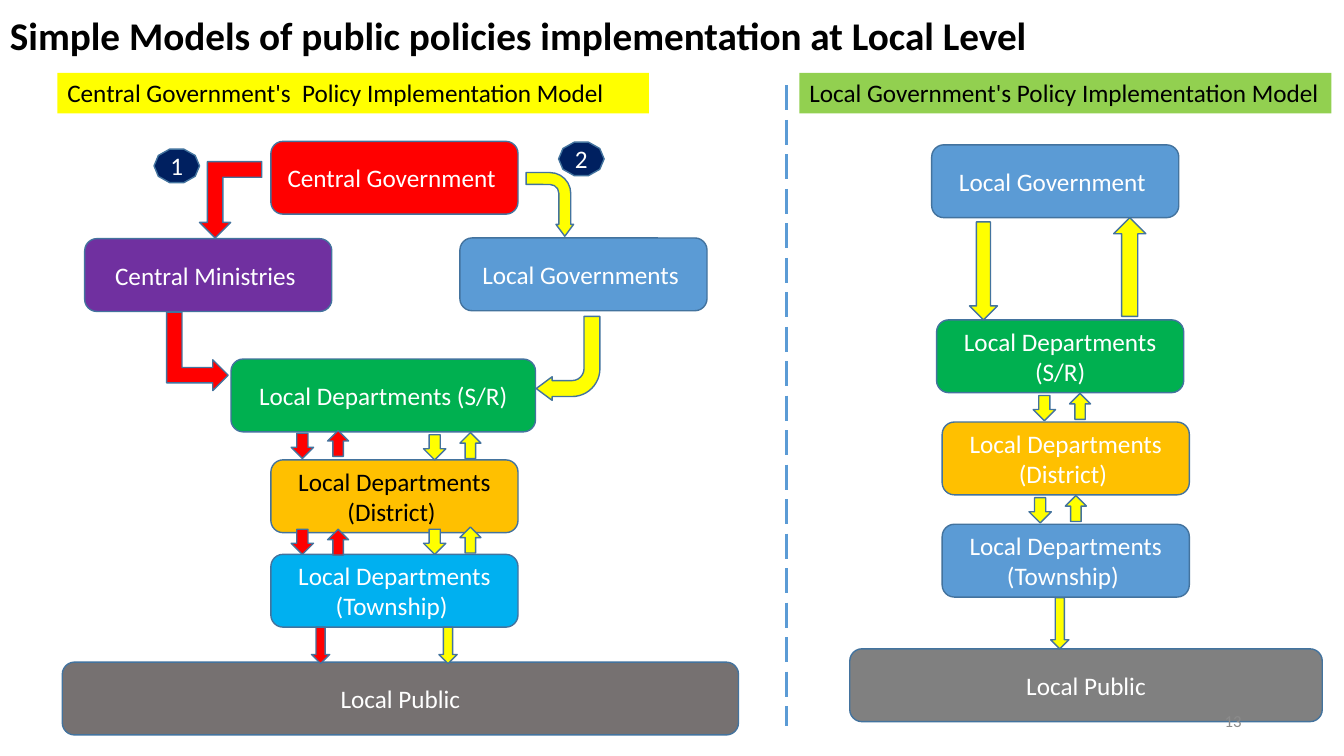
from lxml import etree
from pptx import Presentation
from pptx.dml.color import RGBColor
from pptx.enum import dml, shapes, text
from pptx.oxml import ns
from pptx.util import Pt

KIND = shapes.MSO_SHAPE
SIDE = text.PP_ALIGN
BLACK = RGBColor(0, 0, 0)
WHITE = RGBColor(255, 255, 255)
RED = RGBColor(255, 0, 0)
YELLOW = RGBColor(255, 255, 0)
BLUE = RGBColor(0x5B, 0x9B, 0xD5)
EDGE = RGBColor(0x43, 0x73, 0x9E)
PURPLE = RGBColor(0x70, 0x30, 0xA0)
GREEN = RGBColor(0, 0xB0, 0x50)
LIME = RGBColor(0x92, 0xD0, 0x50)
AMBER = RGBColor(255, 0xC0, 0)
SKY = RGBColor(0, 0xB0, 0xF0)
NAVY = RGBColor(0, 0x20, 0x60)
STONE = RGBColor(0x76, 0x71, 0x71)
GREY = RGBColor(0x80, 0x80, 0x80)
PALE = RGBColor(0x8C, 0x8C, 0x8C)


def write(shape, words, color, size=18, side=SIDE.CENTER, anchor=text.MSO_ANCHOR.MIDDLE, bold=False):
    frame = shape.text_frame
    frame.word_wrap = True
    frame.vertical_anchor = anchor
    para = frame.paragraphs[0]
    para.alignment = side
    run = para.add_run()
    run.text = words
    run.font.name = "Calibri"
    run.font.size = Pt(size)
    run.font.bold = bold
    run.font.color.rgb = color


def draw(slide, kind, x, y, w, h, fill, edge=True):
    shape = slide.shapes.add_shape(kind, Pt(x), Pt(y), Pt(w), Pt(h))
    shape.shadow.inherit = False
    shape.fill.solid()
    shape.fill.fore_color.rgb = fill
    if edge:
        shape.line.color.rgb = EDGE
        shape.line.width = Pt(1)
    else:
        shape.line.fill.background()
    return shape


def label(slide, x, y, w, h, words, color, **style):
    write(slide.shapes.add_textbox(Pt(x), Pt(y), Pt(w), Pt(h)), words, color, **style)


def box(slide, x, y, words, fill, w=176.5, color=WHITE):
    write(draw(slide, KIND.ROUNDED_RECTANGLE, x, y, w, 52, fill), words, color)


def banner(slide, x, w, words, fill):
    shape = draw(slide, KIND.RECTANGLE, x, 52, w, 29, fill, edge=False)
    write(shape, words, BLACK, side=SIDE.LEFT, anchor=text.MSO_ANCHOR.TOP)


def badge(slide, x, y, words):
    write(draw(slide, KIND.DECAGON, x, y, 32.5, 24, NAVY), words, WHITE)


def bend(slide, kind, x, y, w, h, fill, turn, shape_by=()):
    arrow = draw(slide, kind, x, y, w, h, fill)
    arrow.rotation = turn
    for i, part in enumerate(shape_by):
        arrow.adjustments[i] = part


def pair(slide, x, y, fill, rise=1.5):
    draw(slide, KIND.DOWN_ARROW, x, y, 16, 18, fill)
    draw(slide, KIND.UP_ARROW, x + 26, y - rise, 15, 18.5, fill)


def divide(slide, x, top, end):
    line = slide.shapes.add_connector(shapes.MSO_CONNECTOR.STRAIGHT, Pt(x), Pt(top), Pt(x), Pt(end))
    line.line.color.rgb = BLUE
    line.line.width = Pt(2.25)
    line.line.dash_style = dml.MSO_LINE.LONG_DASH
    etree.SubElement(line._element.spPr, ns.qn("a:effectLst"))


def central(slide):
    box(slide, 328.5, 170, "Local Governments ", BLUE)
    box(slide, 193.5, 101, "Central Government ", RED)
    box(slide, 60.5, 170.5, "Central Ministries ", PURPLE)
    box(slide, 165, 256.5, "Local Departments (S/R)", GREEN, w=217.5)
    box(slide, 193.5, 328.5, "Local Departments (District) ", AMBER, color=BLACK)
    box(slide, 193.5, 396, "Local Departments (Township) ", SKY)
    box(slide, 44.5, 473, "Local Public", STONE, w=483)
    banner(slide, 41, 422.5, "Central Government's  Policy Implementation Model", YELLOW)

    curve = (0.25, 0.186, 0.25, 0.438)
    bend(slide, KIND.BENT_ARROW, 370, 129, 45.5, 34, YELLOW, 90, curve)
    bend(slide, KIND.BENT_UP_ARROW, 142.5, 115.5, 44.5, 54.5, RED, 180)
    bend(slide, KIND.BENT_UP_ARROW, 113, 229, 56, 44, RED, 90)
    bend(slide, KIND.BENT_ARROW, 383, 226, 45.5, 60, YELLOW, 180, curve)

    pair(slide, 208, 309.5, RED, rise=2)
    pair(slide, 208, 378, RED, rise=0)
    pair(slide, 302.5, 310.5, YELLOW)
    pair(slide, 302.5, 378, YELLOW)
    for x, fill in ((222.5, RED), (313.5, YELLOW)):
        draw(slide, KIND.DOWN_ARROW, x, 448, 13, 26, fill)
    badge(slide, 110, 106.5, "1")
    badge(slide, 399, 101.5, "2")


def local(slide):
    box(slide, 665.5, 103.5, "Local Government ", BLUE)
    box(slide, 669, 228.5, "Local Departments (S/R)", GREEN)
    box(slide, 673, 301.5, "Local Departments (District) ", AMBER)
    box(slide, 673, 374.5, "Local Departments (Township) ", BLUE)
    box(slide, 607, 463.5, "Local Public", GREY, w=337.5)
    banner(slide, 571, 380, "Local Government's Policy Implementation Model", LIME)
    draw(slide, KIND.DOWN_ARROW, 692.5, 158.5, 20, 70, YELLOW)
    draw(slide, KIND.UP_ARROW, 795.5, 155.5, 23, 70.5, YELLOW)
    pair(slide, 738, 282.5, YELLOW)
    pair(slide, 735, 355.5, YELLOW)
    draw(slide, KIND.DOWN_ARROW, 750.5, 427, 13, 36.5, YELLOW)


def main():
    deck = Presentation()
    deck.slide_width, deck.slide_height = Pt(960), Pt(540)
    slide = deck.slides.add_slide(deck.slide_layouts[6])
    label(slide, 0, 4.5, 918.5, 41, "Simple Models of public policies implementation at Local Level",
          BLACK, size=28, side=SIDE.LEFT, anchor=text.MSO_ANCHOR.TOP, bold=True)
    divide(slide, 561.5, 61, 518.5)
    central(slide)
    local(slide)
    label(slide, 678, 500.5, 216, 29, "13", PALE, size=12, side=SIDE.RIGHT)
    deck.save("out.pptx")


if __name__ == "__main__":
    main()
